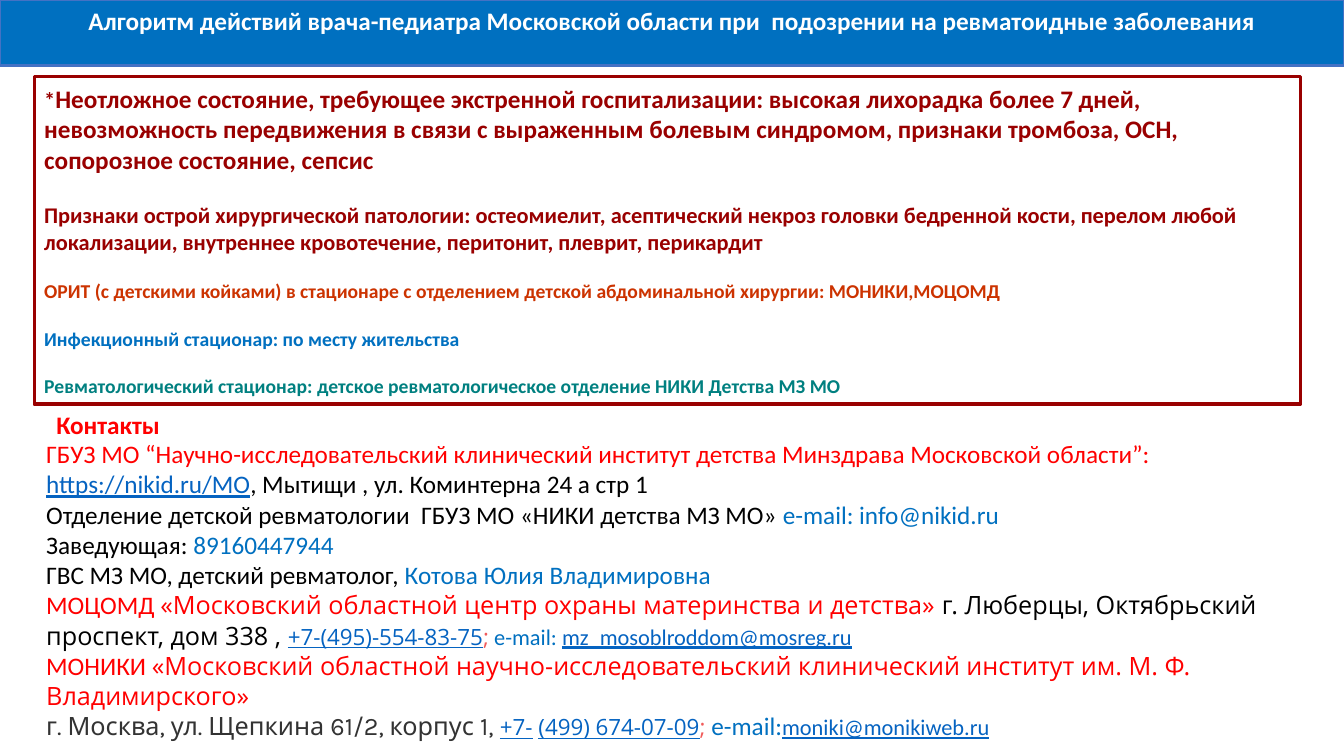
"""Build the slide on a paediatrician's actions when rheumatoid disease is suspected."""
import pptx
import pptx.dml.color
import pptx.enum.shapes
import pptx.enum.text
import pptx.util

Inches = pptx.util.Inches
Pt = pptx.util.Pt
ANCHOR = pptx.enum.text.MSO_ANCHOR
ALIGN = pptx.enum.text.PP_ALIGN

THEME = {
    "font": "Calibri", "wide": "Open Sans", "address": "Karla",
    "large": 18, "medium": 16, "small": 14,
    "white": "FFFFFF", "black": "000000", "grey": "333333",
    "red": "FF0000", "dark_red": "990000", "orange": "CC3300", "coral": "F15B5A",
    "blue": "0070C0", "border": "4472C4", "link": "0563C1", "teal": "008080",
}

TITLE = "Алгоритм действий врача-педиатра Московской области при  подозрении на ревматоидные заболевания"
CONTACTS_HEADING = "Контакты"

# Fields: runs, colour, gap before in points
URGENT = [
    ([("*", "medium"),
      ("Неотложное состояние, требующее экстренной госпитализации: высокая лихорадка более 7 дней, "
       "невозможность передвижения в связи с выраженным болевым синдромом, признаки тромбоза, ОСН, "
       "сопорозное состояние, сепсис", "large")], "dark_red", 0),
    ([("Признаки острой хирургической патологии: остеомиелит, асептический некроз головки бедренной кости, "
       "перелом любой локализации, внутреннее кровотечение, перитонит, плеврит, перикардит", "medium")],
     "dark_red", 19.5),
    ([("ОРИТ (с детскими койками) в стационаре с отделением детской абдоминальной хирургии: "
       "МОНИКИ,МОЦОМД", "small")], "orange", 17),
    ([("Инфекционный стационар: по месту жительства", "small")], "blue", 17),
    ([("Ревматологический стационар: детское ревматологическое отделение НИКИ Детства МЗ МО", "small")],
     "teal", 17),
]

CONTACTS = [
    [("ГБУЗ МО “Научно-исследовательский клинический институт детства Минздрава Московской области”: ", "red"),
     ("https://nikid.ru/МО", "link"),
     (", Мытищи , ул. Коминтерна 24 а стр 1", "black")],
    [("Отделение детской ревматологии  ГБУЗ МО «НИКИ детства МЗ МО» ", "black"),
     ("e-mail: info@nikid.ru", "blue")],
    [("Заведующая: ", "black"), ("89160447944", "blue")],
    [("ГВС МЗ МО, детский ревматолог, ", "black"), ("Котова Юлия Владимировна", "blue")],
    [("МОЦОМД ", "red"),
     ("«Московский областной центр охраны материнства и детства» ", "red", "wide"),
     ("г. Люберцы, Октябрьский проспект, дом 338 , ", "black", "wide"),
     ("+7-(495)-554-83-75", "link", "wide", "medium"),
     (";", "coral", "wide", "medium"),
     (" e-mail: ", "blue", "font", "medium"),
     ("mz_mosoblroddom@mosreg.ru", "link", "font", "medium")],
    [("МОНИКИ ", "red"),
     ("«Московский областной научно-исследовательский клинический институт им. М. Ф. Владимирского»",
      "red", "wide")],
    [("г. Москва, ул. Щепкина 61/2, корпус 1, ", "grey", "address"),
     ("+7-", "link", "wide", "medium"),
     (" ", "coral", "wide", "medium"),
     ("(499) 674-07-09", "link", "wide", "medium"),
     ("; ", "coral", "wide", "medium"),
     ("e-mail:", "blue"),
     ("moniki@monikiweb.ru", "link", "font", "medium")],
]


def rgb(name):
    return pptx.dml.color.RGBColor.from_string(THEME[name])


def style(font, color=None, face=None, size=None, bold=None):
    if color:
        font.color.rgb = rgb(color)
    if face:
        font.name = THEME[face]
    if size:
        font.size = Pt(THEME[size])
    if bold:
        font.bold = True


def add_panel(slide, box, fill, line, width, anchor):
    sp = slide.shapes.add_shape(pptx.enum.shapes.MSO_SHAPE.RECTANGLE, *map(Inches, box))
    sp.shadow.inherit = False
    if fill:
        sp.fill.solid()
        sp.fill.fore_color.rgb = rgb(fill)
    else:
        sp.fill.background()
    sp.line.color.rgb = rgb(line)
    sp.line.width = Pt(width)
    sp.text_frame.word_wrap = True
    sp.text_frame.vertical_anchor = anchor
    return sp.text_frame


def add_text(slide, box):
    tf = slide.shapes.add_textbox(*map(Inches, box)).text_frame
    tf.word_wrap = True
    return tf


def paragraphs(tf, items):
    for i, item in enumerate(items):
        yield (tf.add_paragraph() if i else tf.paragraphs[0]), item


def add_line(tf, text, color):
    p = tf.paragraphs[0]
    p.text = text
    style(p.font, color, "font", "large", True)
    return p


def fill_urgent(tf):
    for p, (runs, color, gap) in paragraphs(tf, URGENT):
        p.alignment = ALIGN.LEFT
        if gap:
            p.space_before = Pt(gap)
        style(p.font, color, "font", bold=True)
        for text, size in runs:
            r = p.add_run()
            r.text = text
            style(r.font, size=size)


def fill_contacts(tf):
    for p, runs in paragraphs(tf, CONTACTS):
        style(p.font, face="font", size="large")
        for text, color, *face_size in runs:
            r = p.add_run()
            r.text = text
            style(r.font, color, *face_size)
            if color == "link":
                r.font.underline = True


def main():
    prs = pptx.Presentation()
    prs.slide_width, prs.slide_height = Inches(13.33), Inches(7.5)
    s = prs.slides.add_slide(prs.slide_layouts[6])
    fill_urgent(add_panel(s, (0.34, 0.76, 12.56, 3.25), None, "dark_red", 2.5, ANCHOR.MIDDLE))
    fill_contacts(add_text(s, (0.36, 4.3, 12.95, 3.15)))
    banner = add_panel(s, (0, 0, 13.33, 0.65), "blue", "border", 1.5, ANCHOR.TOP)
    add_line(banner, TITLE, "white").alignment = ALIGN.CENTER
    add_line(add_text(s, (0.46, 4.01, 2.85, 0.4)), CONTACTS_HEADING, "red")
    prs.save("out.pptx")


if __name__ == "__main__":
    main()
